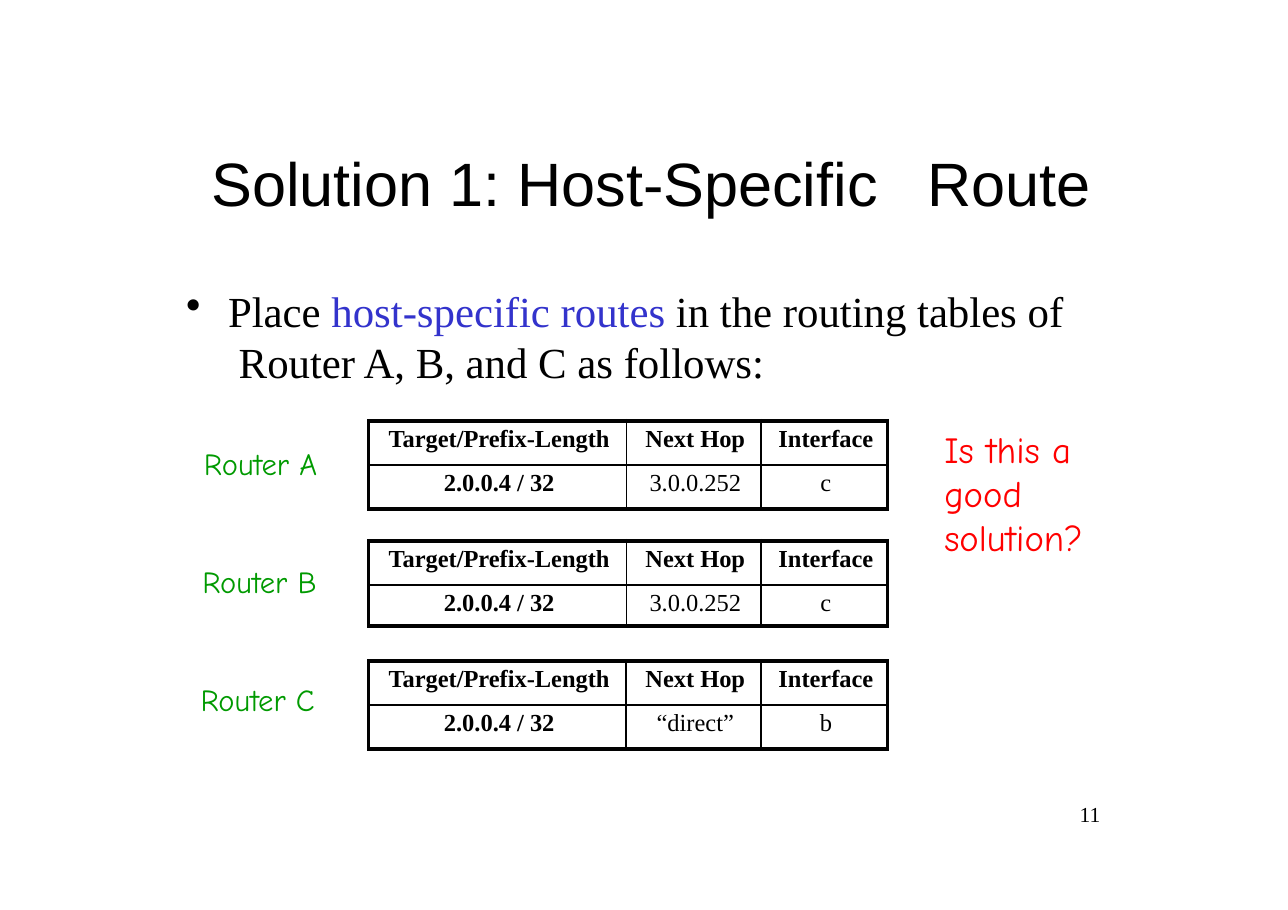
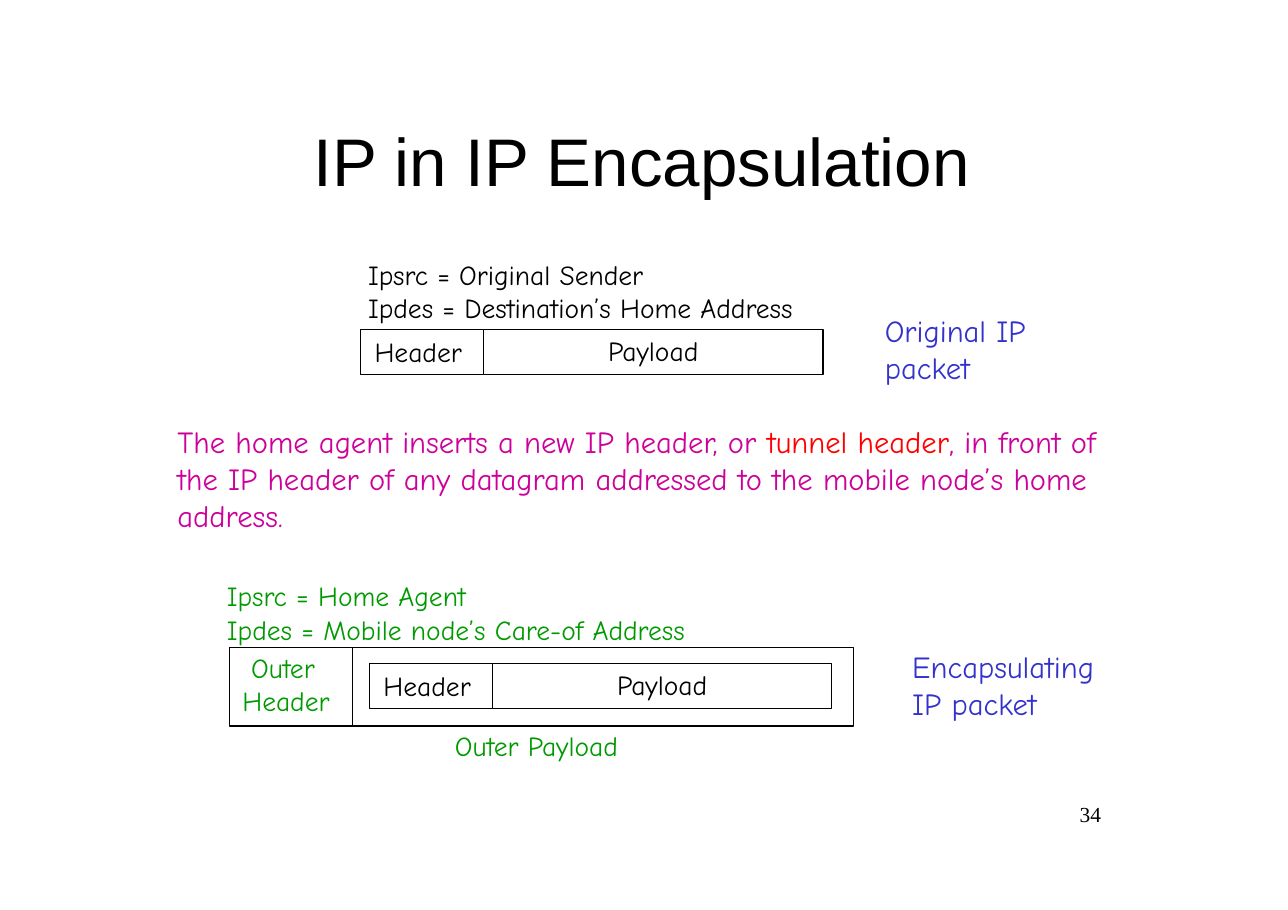
import pptx
import pptx.dml.color
import pptx.enum.shapes
import pptx.enum.text
import pptx.oxml.ns
import pptx.util
from lxml import etree

RGB = pptx.dml.color.RGBColor
Pt = pptx.util.Pt
Inches = pptx.util.Inches
ALIGN = pptx.enum.text.PP_ALIGN

BLACK = RGB(0x00, 0x00, 0x00)
INK = RGB(0x01, 0x01, 0x01)
BLUE = RGB(0x33, 0x33, 0xCC)
GREEN = RGB(0x00, 0x9A, 0x00)
RED = RGB(0xFF, 0x00, 0x00)
PINK = RGB(0xCC, 0x00, 0x9A)

SANS, HAND, SERIF = "Arial", "Comic Neue", "Times New Roman"
WIDTH, HEIGHT = Inches(11.69), Inches(8.26)

HEAD = ("Target/Prefix-Length", "Next Hop", "Interface")
TARGET = "2.0.0.4 / 32"
COLS = (20.02, 10.44, 9.84)
ROW = 4.84


def across(share):
    """Turn a percentage of the slide's width into a length."""
    return round(WIDTH * share / 100)


def down(share):
    """Turn a percentage of the slide's height into a length."""
    return round(HEIGHT * share / 100)


def place(x, y, wide, high):
    return across(x), down(y), across(wide), down(high)


def add_xml(parent, tag, **attrs):
    node = etree.SubElement(parent, pptx.oxml.ns.qn("a:" + tag))
    for key, value in attrs.items():
        node.set(key, str(value))
    return node


def write(frame, *paras, size=18, font=HAND, color=BLACK, bold=False,
          align=ALIGN.LEFT, before=1, top=0.01, left=0.01, hang=0,
          bullet=None, tab=None):
    """Fill a frame; a paragraph is a string or a list of (text, colour)."""
    frame.word_wrap = True
    frame.vertical_anchor = pptx.enum.text.MSO_ANCHOR.TOP
    frame.margin_left = frame.margin_right = frame.margin_bottom = 0
    frame.margin_top = Inches(top)
    for i, parts in enumerate(paras):
        para = frame.add_paragraph() if i else frame.paragraphs[0]
        para.alignment = align
        para.space_before = Pt(0 if i else before)
        props = para._p.get_or_add_pPr()
        props.set("marL", str(Inches(left)))
        props.set("indent", str(Inches(hang)))
        if bullet:
            add_xml(props, "buChar", char=bullet)
        if tab:
            add_xml(add_xml(props, "tabLst"), "tab", pos=tab, algn="l")
        if isinstance(parts, str):
            parts = [(parts, color)]
        for words, tint in parts:
            for j, line in enumerate(words.split("\n")):
                if j:
                    para.add_line_break()
                run = para.add_run()
                run.text = line
                run.font.size = Pt(size)
                run.font.name = font
                run.font.bold = bold
                run.font.color.rgb = tint


def label(slide, x, y, wide, high, *paras, **style):
    box = slide.shapes.add_textbox(*place(x, y, wide, high))
    write(box.text_frame, *paras, **style)


def frame_box(slide, x, y, wide, high, *paras, **style):
    """Draw an outlined rectangle, with text if any is given."""
    kind = pptx.enum.shapes.MSO_SHAPE.RECTANGLE
    box = slide.shapes.add_shape(kind, *place(x, y, wide, high))
    box.shadow.inherit = False
    box.fill.background()
    box.line.color.rgb = INK
    box.line.width = Pt(0.75)
    write(box.text_frame, *paras, **style)


def start(deck, title, x, y, size, number, **style):
    """Add a slide with its title and page number."""
    slide = deck.slides.add_slide(deck.slide_layouts[6])
    label(slide, x, y, 72, 9, title, size=size, font=SANS, **style)
    label(slide, 83.58, 88, 4, 3, number, size=14, font=SERIF,
          before=0, top=0, left=0.03)
    return slide


def edge(cell, **widths):
    """Set the cell's borders, given as L, R, T and B in points."""
    props = cell._tc.get_or_add_tcPr()
    for side in "LRTB":
        line = add_xml(props, "ln" + side, w=Pt(widths[side]))
        add_xml(add_xml(line, "solidFill"), "srgbClr", val=INK)


def route(slide, x, y, rows, inner, hop, port):
    """Add a routing table; inner holds its two inner line widths."""
    shape = slide.shapes.add_table(
        2, 3, *place(x, y, sum(COLS), sum(rows)))
    table = shape.table
    table.first_row = table.horz_banding = False
    for col, wide in zip(table.columns, COLS):
        col.width = across(wide)
    for row, high in zip(table.rows, rows):
        row.height = down(high)
    sides = (2.25, *inner, 2.25)
    levels = (3, 1.5, 3)
    for r, words in enumerate((HEAD, (TARGET, hop, port))):
        for c, word in enumerate(words):
            cell = table.cell(r, c)
            edge(cell, L=sides[c], R=sides[c + 1],
                 T=levels[r], B=levels[r + 1])
            cell.fill.background()
            write(cell.text_frame, word, size=16, font=SERIF,
                  bold=r == 0 or c == 0, align=ALIGN.CENTER,
                  before=3, left=0.03)
            cell.margin_left = cell.margin_right = cell.margin_bottom = 0
            cell.margin_top = Inches(0.04)


def packet(slide, x, y):
    """Draw an inner header with its payload."""
    wide, high = 9.58, 4.96
    frame_box(slide, x, y, wide, high, "Header",
              top=0.05, before=3.3, left=0.13)
    frame_box(slide, x + wide, y, 26.35, high, "Payload",
              top=0.04, before=3.1, left=0, align=ALIGN.CENTER)


def build_routes(deck):
    slide = start(deck, "Solution 1: Host-Specific\tRoute", 16.34, 15.86,
                  40, "11", tab=Inches(6.38))
    label(slide, 14.37, 31.11, 72, 11.6,
          [("Place ", BLACK), ("host-specific routes", BLUE),
           (" in the routing tables of\n Router A, B, and C as follows:",
            BLACK)],
          size=28, font=SERIF, left=0.39, hang=-0.38, bullet="•")
    routers = (
        ("Router A", ROW, (1, 1), "3.0.0.252", "c"),
        ("Router B", 4.48, (1, 1.5), "3.0.0.252", "c"),
        ("Router C", ROW, (1.5, 1.5), "“direct”", "b"),
    )
    for i, (name, last, inner, hop, port) in enumerate(routers):
        route(slide, 28.62, 46.25 + 13.2 * i, (ROW, last),
              inner, hop, port)
        label(slide, 15.75 - 0.13 * i, 48.79 + 12.95 * i, 12, 4.36,
              name, size=20, color=GREEN)
    label(slide, 73.23, 46.73, 14, 14.9, "Is this a\ngood\nsolution?",
          size=24, color=RED)


def build_tunnel(deck):
    slide = start(deck, "IP in IP Encapsulation", 24.29, 12.95, 44, "34")
    label(slide, 28.49, 28.21, 40, 8, "Ipsrc = Original Sender",
          "Ipdes = Destination’s Home Address")
    packet(slide, 27.97, 36.2)
    label(slide, 68.61, 34.14, 16, 8.35, "Original IP\npacket",
          size=20, color=BLUE)

    label(slide, 13.69, 46.37, 74, 13.5,
          [("The home agent inserts a new IP header, or ", PINK),
           ("tunnel header", RED),
           (", in front of\nthe IP header of any datagram addressed "
            "to the mobile node’s home\naddress.", PINK)], size=20)

    label(slide, 17.54, 63.56, 45, 8, "Ipsrc = Home Agent",
          "Ipdes = Mobile node’s Care-of Address", color=GREEN)
    frame_box(slide, 17.79, 71.19, 9.58, 8.6, "Outer\nHeader",
              color=GREEN, top=0.03, left=0.12, hang=0.08)
    frame_box(slide, 27.37, 71.19, 38.92, 8.6)
    packet(slide, 28.66, 72.88)
    label(slide, 35.24, 80.02, 20, 4, "Outer Payload", color=GREEN)
    label(slide, 70.74, 71.07, 18, 8.35, "Encapsulating\nIP packet",
          size=20, color=BLUE)


def main():
    deck = pptx.Presentation()
    deck.slide_width, deck.slide_height = WIDTH, HEIGHT
    build_routes(deck)
    build_tunnel(deck)
    deck.save("out.pptx")


if __name__ == "__main__":
    main()
